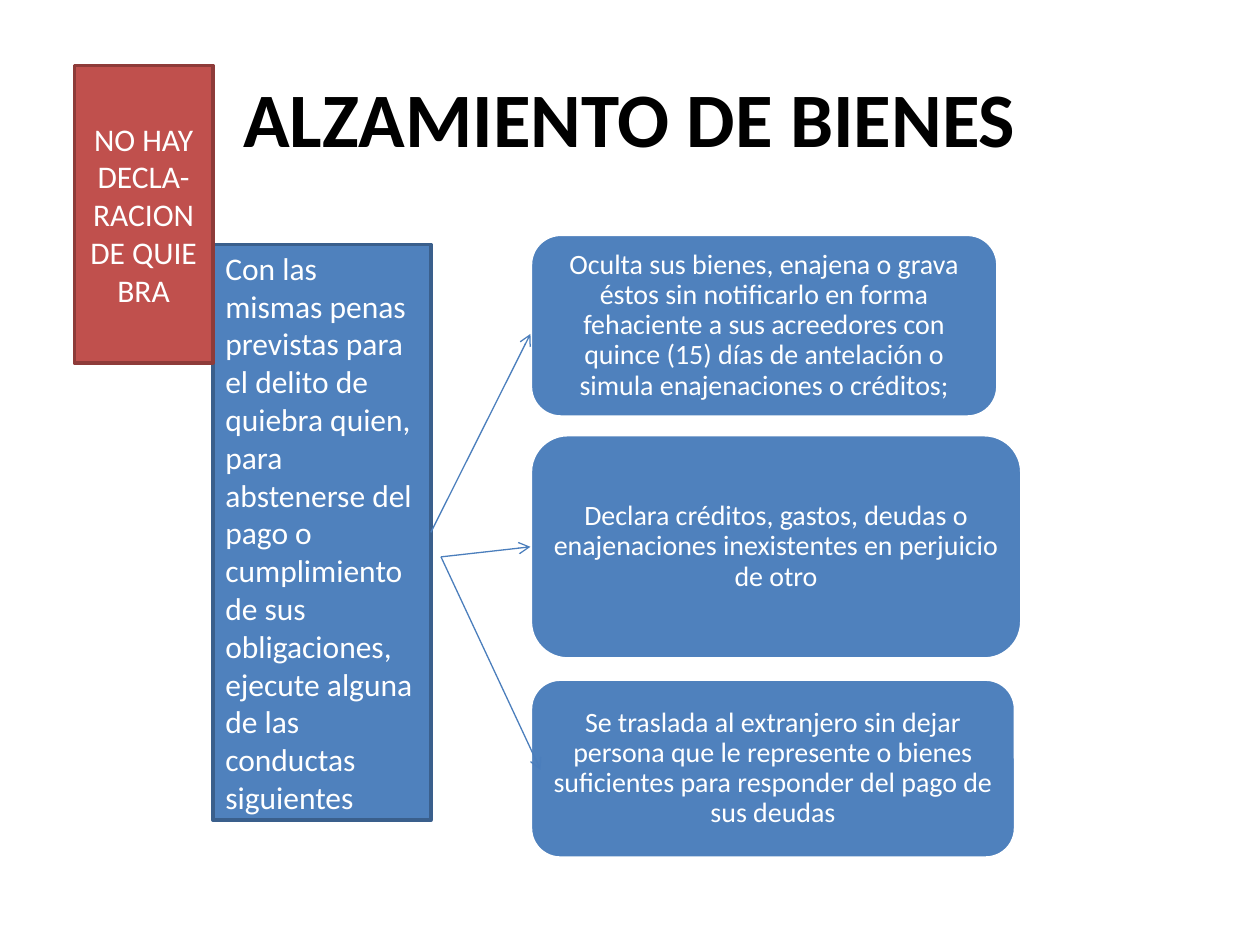
import pptx
import pptx.util
import pptx.dml.color
import pptx.enum.shapes
import pptx.enum.text
import pptx.oxml.ns
from lxml import etree

Inches, Pt = pptx.util.Inches, pptx.util.Pt
SHAPE = pptx.enum.shapes.MSO_SHAPE
ALIGN = pptx.enum.text.PP_ALIGN
MIDDLE = pptx.enum.text.MSO_ANCHOR.MIDDLE

# Content
TITLE = "ALZAMIENTO DE BIENES"
NOTICE = ["NO HAY DECLA-", "RACION DE QUIE", "BRA"]
PREMISE = ("Con las mismas penas previstas para el delito de quiebra quien, "
           "para abstenerse del pago o cumplimiento de sus obligaciones, "
           "ejecute alguna de las conductas siguientes")
CONDUCT_LEFT = 4.21
CONDUCTS = [  # text, top, width, height
    ("Oculta sus bienes, enajena o grava éstos sin notificarlo en forma "
     "fehaciente a sus acreedores con quince (15) días de antelación o "
     "simula enajenaciones o créditos;", 1.86, 3.71, 1.45),
    ("Declara créditos, gastos, deudas o enajenaciones inexistentes en "
     "perjuicio de otro", 3.45, 3.9, 1.78),
    ("Se traslada al extranjero sin dejar persona que le represente o bienes "
     "suficientes para responder del pago de sus deudas", 5.39, 3.85, 1.42),
]
ARROWS = [  # from, to
    ((3.42, 4.22), (4.21, 2.65)),
    ((3.5, 4.42), (4.21, 4.34)),
    ((3.5, 4.42), (4.29, 6.11)),
]
BLUE, RED, WHITE, BLACK = "4F81BD", "C0504D", "FFFFFF", "000000"
BLUE_EDGE, RED_EDGE, ARROW_BLUE = "3A5F8C", "8E3B39", "4B7EBC"


def color(hex_text):
    return pptx.dml.color.RGBColor.from_string(hex_text)


def write(frame, lines, size, ink, align, bold=False):
    frame.word_wrap = True
    frame.vertical_anchor = MIDDLE
    for i, line in enumerate(lines):
        paragraph = frame.add_paragraph() if i else frame.paragraphs[0]
        paragraph.alignment = align
        run = paragraph.add_run()
        run.text = line
        run.font.name = "Calibri"
        run.font.size = Pt(size)
        run.font.bold = bold
        run.font.color.rgb = color(ink)


def add_box(kind, box, fill, edge, lines, size, align):
    shape = slide.shapes.add_shape(kind, *map(Inches, box))
    shape.shadow.inherit = False
    shape.fill.solid()
    shape.fill.fore_color.rgb = color(fill)
    shape.line.color.rgb = color(edge)
    shape.line.width = Pt(2)
    write(shape.text_frame, lines, size, WHITE, align)
    return shape


def add_arrow(start, end):
    arrow = slide.shapes.add_connector(
        pptx.enum.shapes.MSO_CONNECTOR.STRAIGHT, *map(Inches, start + end))
    arrow.line.color.rgb = color(ARROW_BLUE)
    arrow.line.width = Pt(0.75)
    qn = pptx.oxml.ns.qn
    etree.SubElement(arrow.line._get_or_add_ln(), qn("a:tailEnd"), type="arrow")
    etree.SubElement(arrow._element.spPr, qn("a:effectLst"))
    return arrow


prs = pptx.Presentation()
prs.slide_width, prs.slide_height = Inches(10), Inches(7.5)
slide = prs.slides.add_slide(prs.slide_layouts[5])

# Title
title = slide.shapes.title
title.left, title.top, title.width, title.height = map(Inches, (0.5, 0.3, 9, 1.25))
write(title.text_frame, [TITLE], 44, BLACK, ALIGN.CENTER, bold=True)

# Punishable conducts
conducts = []
for text, top, width, height in CONDUCTS:
    conduct = add_box(SHAPE.ROUNDED_RECTANGLE, (CONDUCT_LEFT, top, width, height),
                      BLUE, WHITE, [text], 16, ALIGN.CENTER)
    frame = conduct.text_frame
    frame.margin_left = frame.margin_right = Inches(0.07)
    frame.margin_top = frame.margin_bottom = Inches(0.03)
    frame.paragraphs[0].line_spacing = 0.9
    conducts.append(conduct)

# Premise and its arrows to the conducts
premise = add_box(SHAPE.RECTANGLE, (1.69, 1.94, 1.73, 4.57), BLUE, BLUE_EDGE,
                  [PREMISE], 18, ALIGN.LEFT)
arrows = [add_arrow(start, end) for start, end in ARROWS]
arrows[0].begin_connect(premise, 3)
arrows[1].end_connect(conducts[1], 1)

# Notice
add_box(SHAPE.RECTANGLE, (0.59, 0.52, 1.1, 2.36), RED, RED_EDGE,
        NOTICE, 18, ALIGN.CENTER)

prs.save("out.pptx")
